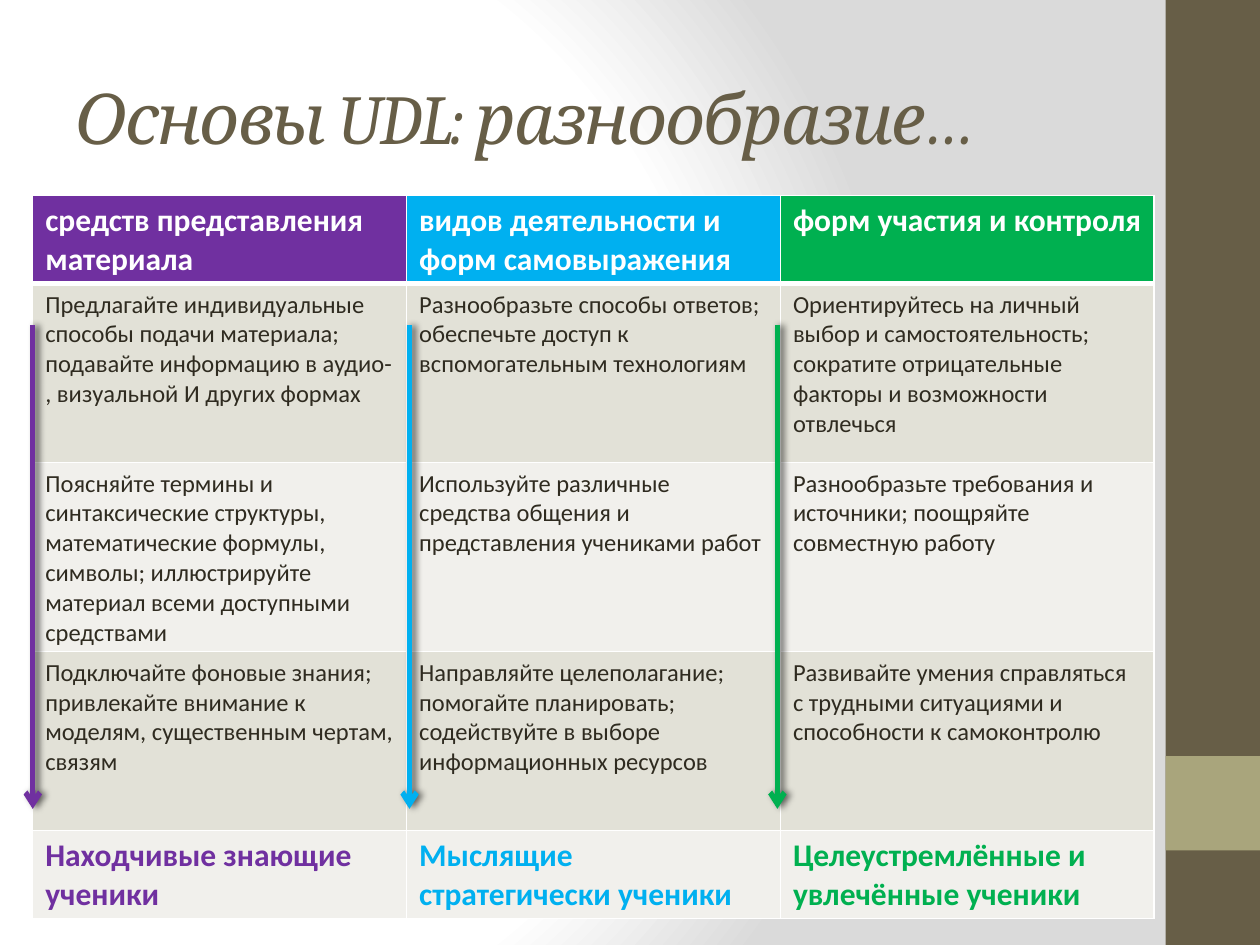
import pptx
import pptx.dml.color
import pptx.enum.shapes
import pptx.enum.text
import pptx.oxml
import pptx.oxml.ns
import pptx.util

RGB = pptx.dml.color.RGBColor
WHITE = RGB(0xFF, 0xFF, 0xFF)
GREY = RGB(0xDA, 0xDA, 0xDA)
BROWN = RGB(0x67, 0x5E, 0x47)
OLIVE = RGB(0xA9, 0xA5, 0x7C)
INK = RGB(0x2F, 0x2B, 0x20)
DARK_BAND = RGB(0xE2, 0xE1, 0xD7)
LIGHT_BAND = RGB(0xF1, 0xF0, 0xEC)
PURPLE = RGB(0x70, 0x30, 0xA0)
BLUE = RGB(0x00, 0xB0, 0xF0)
GREEN = RGB(0x00, 0xB0, 0x50)

ACCENTS = [PURPLE, BLUE, GREEN]
ROW_HEIGHTS = [6.7, 14.2, 14.4, 14.2, 6.7]
COLUMN_WIDTH = 29.67
ARROW_COLUMNS = [2.6, 32.5, 61.7]
CONTENT = [
    ["средств представления материала",
     "видов деятельности и форм самовыражения",
     "форм участия и контроля"],
    ["Предлагайте индивидуальные способы подачи материала; подавайте информацию в аудио- , визуальной И других формах",
     "Разнообразьте способы ответов; обеспечьте доступ к вспомогательным технологиям",
     "Ориентируйтесь на личный выбор и самостоятельность; сократите отрицательные факторы и возможности отвлечься"],
    ["Поясняйте термины и синтаксические структуры, математические формулы, символы; иллюстрируйте материал всеми доступными средствами",
     "Используйте различные средства общения и представления учениками работ",
     "Разнообразьте требования и источники; поощряйте совместную работу"],
    ["Подключайте фоновые знания; привлекайте внимание к моделям, существенным чертам, связям",
     "Направляйте целеполагание; помогайте планировать; содействуйте в выборе информационных ресурсов",
     "Развивайте умения справляться с трудными ситуациями и способности к самоконтролю"],
    ["Находчивые знающие ученики",
     "Мыслящие стратегически ученики",
     "Целеустремлённые и увлечённые ученики"],
]


def xml(markup):
    tag, rest = markup[1:].split(" ", 1)
    return pptx.oxml.parse_xml(f"<{tag} {pptx.oxml.ns.nsdecls('a')} {rest}")


def solid(color):
    return f'<a:solidFill><a:srgbClr val="{color}"/></a:solidFill>'


def write(frame, text, font="Calibri", size=14, color=INK, bold=False, italic=False, spacing=None):
    span = frame.paragraphs[0].add_run()
    span.text = text
    span.font.name = font
    span.font.size = pptx.util.Pt(size)
    span.font.bold = bold
    span.font.italic = italic
    span.font.color.rgb = color
    if spacing is not None:
        span.font._element.set("spc", str(spacing * 100))


class Style:
    def __init__(self, page, unit):
        self.page = page
        self.unit = unit

    def grid(self, *lengths):
        return [round(length * self.unit) for length in lengths]

    def background(self):
        self.page.background.fill.gradient()
        gradient = self.page.element.find(".//" + pptx.oxml.ns.qn("a:gradFill"))
        for child in list(gradient):
            gradient.remove(child)
        stops = "".join(
            f'<a:gs pos="{share * 1000}"><a:srgbClr val="{color}"/></a:gs>'
            for share, color in [(0, WHITE), (75, WHITE), (100, GREY)])
        gradient.append(xml(f"<a:gsLst >{stops}</a:gsLst>"))
        gradient.append(xml('<a:path path="circle"><a:fillToRect l="20000" t="50000" r="100000" b="50000"/></a:path>'))

    def panel(self, left, top, width, height, color):
        box = self.page.shapes.add_shape(
            pptx.enum.shapes.MSO_SHAPE.RECTANGLE, *self.grid(left, top, width, height))
        box.shadow.inherit = False
        box.fill.solid()
        box.fill.fore_color.rgb = color
        box.line.fill.background()

    def title(self, left, top, width, height, text):
        box = self.page.shapes.add_textbox(*self.grid(left, top, width, height))
        box.text_frame.word_wrap = True
        box.text_frame.vertical_anchor = pptx.enum.text.MSO_ANCHOR.MIDDLE
        write(box.text_frame, text, font="Cambria", size=40, color=BROWN, italic=True, spacing=-1)

    def cell(self, cell, text, fill, bottom=1, **style):
        properties = cell._tc.get_or_add_tcPr()
        for side in "LRTB":
            width = pptx.util.Pt(bottom if side == "B" else 1)
            properties.append(xml(f'<a:ln{side} w="{width}">{solid(WHITE)}</a:ln{side}>'))
        cell.fill.solid()
        cell.fill.fore_color.rgb = fill
        write(cell.text_frame, text, **style)

    def table(self, left, top):
        table = self.page.shapes.add_table(
            len(CONTENT), len(ACCENTS),
            *self.grid(left, top, COLUMN_WIDTH * len(ACCENTS), sum(ROW_HEIGHTS))).table
        table.horz_banding = False
        for column in table.columns:
            column.width = self.grid(COLUMN_WIDTH)[0]
        last = len(CONTENT) - 1
        for index, texts in enumerate(CONTENT):
            table.rows[index].height = self.grid(ROW_HEIGHTS[index])[0]
            band = DARK_BAND if index % 2 else LIGHT_BAND
            for place, (text, accent) in enumerate(zip(texts, ACCENTS)):
                cell = table.cell(index, place)
                if index == 0:
                    self.cell(cell, text, accent, bottom=3, size=18, color=WHITE, bold=True)
                elif index == last:
                    self.cell(cell, text, band, size=18, color=accent, bold=True)
                else:
                    self.cell(cell, text, band)

    def arrow(self, column, top, bottom, color):
        line = self.page.shapes.add_connector(
            pptx.enum.shapes.MSO_CONNECTOR.STRAIGHT, *self.grid(column, top, column, bottom))
        line.line.color.rgb = color
        line.line.width = pptx.util.Pt(3)
        line.line._get_or_add_ln().append(xml('<a:tailEnd type="arrow"/>'))
        blur, distance = pptx.util.Pt(4), pptx.util.Pt(2)
        line._element.spPr.append(xml(
            f'<a:effectLst ><a:outerShdw blurRad="{blur}" dist="{distance}" dir="0" rotWithShape="0">'
            '<a:srgbClr val="000000"><a:alpha val="60000"/></a:srgbClr></a:outerShdw></a:effectLst>'))


def main():
    deck = pptx.Presentation()
    deck.slide_width = pptx.util.Inches(10)
    deck.slide_height = pptx.util.Inches(7.5)
    page = deck.slides.add_slide(deck.slide_layouts[6])
    style = Style(page, deck.slide_width / 100)
    style.background()
    style.panel(92.5, 0, 7.5, 75, BROWN)
    style.panel(92.5, 60, 7.5, 7.5, OLIVE)
    style.title(5, 3, 83.3, 12.5, "Основы UDL: разнообразие…")
    style.table(2.6, 15.5)
    for column, accent in zip(ARROW_COLUMNS, ACCENTS):
        style.arrow(column, 25.8, 64.2, accent)
    deck.save("out.pptx")


if __name__ == "__main__":
    main()
